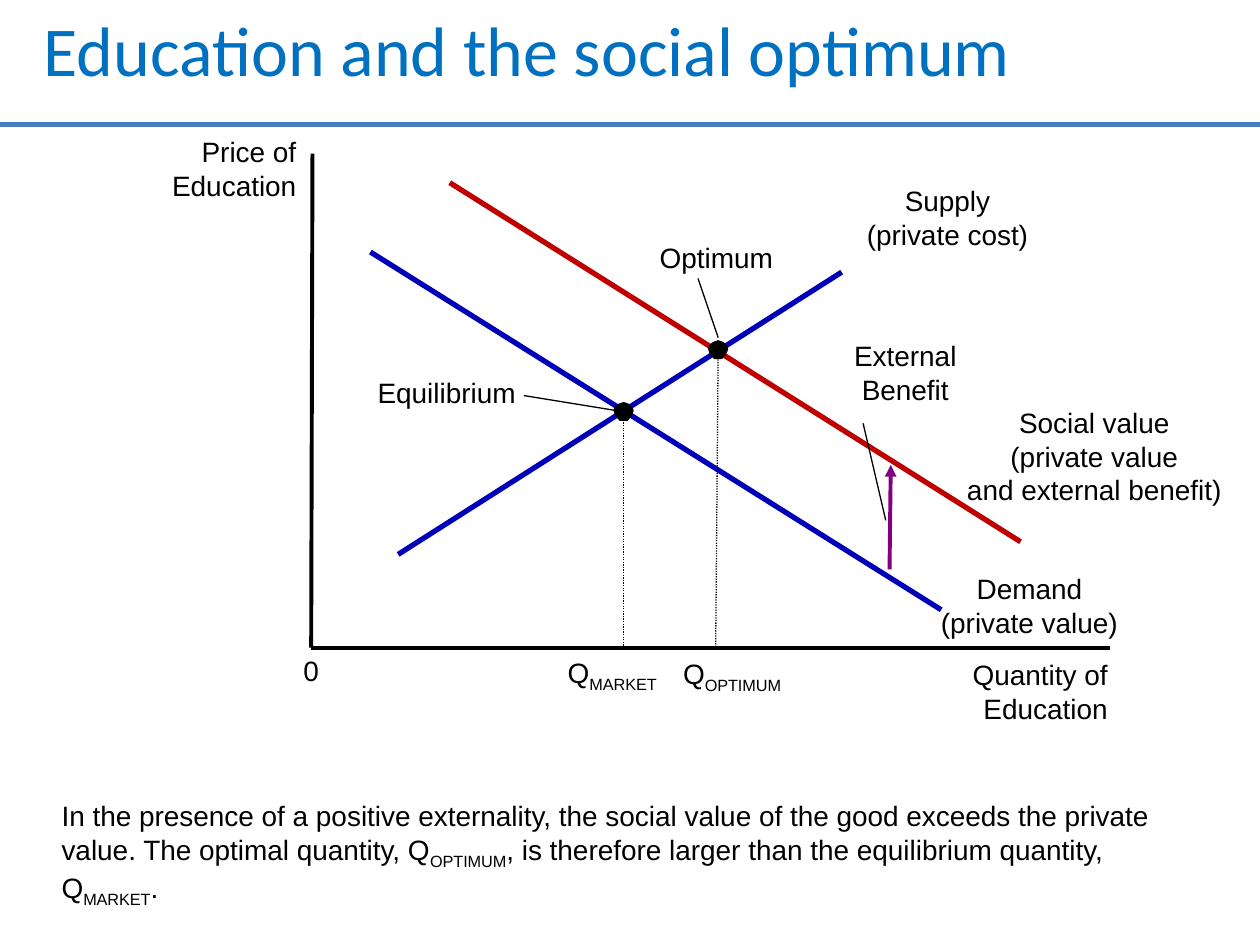
from dataclasses import dataclass

from lxml.etree import SubElement
from pptx import Presentation
from pptx.dml.color import RGBColor
from pptx.enum.dml import MSO_LINE
from pptx.enum.shapes import MSO_CONNECTOR, MSO_SHAPE
from pptx.enum.text import MSO_ANCHOR, MSO_AUTO_SIZE, PP_ALIGN
from pptx.oxml.ns import qn
from pptx.slide import Slide
from pptx.util import Pt

PX = 9144
BLACK = RGBColor(0x00, 0x00, 0x00)
WHITE = RGBColor(0xFF, 0xFF, 0xFF)
TITLE = RGBColor(0x00, 0x70, 0xC0)
RULE = RGBColor(0x4B, 0x7E, 0xBC)
BLUE = RGBColor(0x00, 0x00, 0xB8)
RED = RGBColor(0xC0, 0x00, 0x00)
PURPLE = RGBColor(0x80, 0x00, 0x80)
LEFT, MID, RIGHT = PP_ALIGN.LEFT, PP_ALIGN.CENTER, PP_ALIGN.RIGHT


@dataclass(frozen=True)
class Line:
    start: tuple[int, int]
    end: tuple[int, int]
    color: RGBColor = BLACK
    width: float = 0.75
    dotted: bool = False
    arrow: bool = False


@dataclass(frozen=True)
class Label:
    text: str
    box: tuple[int, int, int, int]
    align: PP_ALIGN = MID
    wrap: bool = False


LINES = [
    Line((0, 99), (1000, 99), RULE, 3),
    Line((248, 122), (247, 514), width=2.25),
    Line((247, 514), (881, 514), width=2.25),
    Line((294, 200), (747, 484), BLUE, 3),
    Line((316, 440), (668, 216), BLUE, 3),
    Line((495, 323), (495, 515), dotted=True),
    Line((416, 314), (490, 326)),
    Line((357, 145), (810, 430), RED, 3),
    Line((706, 452), (707, 369), PURPLE, 2.25, arrow=True),
    Line((685, 336), (703, 413)),
    Line((570, 275), (568, 516), dotted=True),
    Line((554, 221), (570, 268)),
]

LABELS = [
    Label("Price of\nEducation", (116, 102, 129, 64), RIGHT, True),
    Label("Quantity of Education", (753, 517, 136, 64), RIGHT, True),
    Label("0", (231, 514, 33, 37), LEFT),
    Label("Demand\n(private value)", (736, 449, 162, 64)),
    Label("Supply\n(private cost)", (677, 141, 150, 64)),
    Label("Q[MARKET]", (436, 515, 100, 37)),
    Label("Q[OPTIMUM]", (527, 516, 108, 37)),
    Label("Equilibrium", (289, 293, 131, 37)),
    Label("Optimum", (513, 186, 111, 37)),
    Label("Social value\n(private value\nand external benefit)", (756, 317, 225, 91)),
    Label("External\nBenefit", (667, 264, 103, 64)),
    Label(
        "In the presence of a positive externality, the social value of the good "
        "exceeds the private value. The optimal quantity, Q[OPTIMUM], is therefore "
        "larger than the equilibrium quantity, Q[MARKET].",
        (39, 629, 888, 91), LEFT, True,
    ),
]

DOTS = [(495, 326), (570, 277)]
HALF = [(0, 8), (3, 8), (5, 6), (7, 3), (8, 0), (7, -3), (5, -5), (3, -6), (0, -7)]
RING = HALF + [(-x, y) for x, y in HALF[-2:0:-1]]


def write(slide: Slide, text: str, *, box: tuple[int, int, int, int],
          align: PP_ALIGN = LEFT, wrap: bool = True, size: int = 16,
          font: str = "Arial", color: RGBColor = BLACK, grow: bool = True) -> None:
    frame = slide.shapes.add_textbox(*(n * PX for n in box)).text_frame
    frame.word_wrap = wrap
    frame.auto_size = MSO_AUTO_SIZE.SHAPE_TO_FIT_TEXT if grow else MSO_AUTO_SIZE.NONE
    frame.vertical_anchor = MSO_ANCHOR.TOP
    for row, words in enumerate(text.split("\n")):
        para = frame.add_paragraph() if row else frame.paragraphs[0]
        para.alignment = align
        for spot, part in enumerate(words.replace("]", "[").split("[")):
            if not part:
                continue
            run = para.add_run()
            run.text = part
            run.font.size = Pt(size)
            run.font.name = font
            run.font.color.rgb = color
            if spot % 2:
                run.font._element.set("baseline", "-25000")


def draw(slide: Slide, line: Line) -> None:
    ends = (n * PX for n in line.start + line.end)
    shape = slide.shapes.add_connector(MSO_CONNECTOR.STRAIGHT, *ends)
    shape.line.color.rgb = line.color
    shape.line.width = Pt(line.width)
    if line.dotted:
        shape.line.dash_style = MSO_LINE.ROUND_DOT
    if line.arrow:
        SubElement(shape.line._get_or_add_ln(), qn("a:tailEnd"), type="triangle")
    SubElement(shape._element.spPr, qn("a:effectLst"))


def dot(slide: Slide, spot: tuple[int, int]) -> None:
    ring = [(spot[0] + x, spot[1] + y) for x, y in RING]
    path = slide.shapes.build_freeform(*ring[0], scale=PX)
    path.add_line_segments(ring[1:], close=True)
    shape = path.convert_to_shape()
    shape.shadow.inherit = False
    shape.fill.solid()
    shape.fill.fore_color.rgb = BLACK
    shape.line.fill.background()


def panel(slide: Slide, box: tuple[int, int, int, int]) -> None:
    shape = slide.shapes.add_shape(MSO_SHAPE.RECTANGLE, *(n * PX for n in box))
    shape.shadow.inherit = False
    shape.fill.solid()
    shape.fill.fore_color.rgb = WHITE
    shape.line.color.rgb = WHITE
    shape.line.width = Pt(2)


def main() -> None:
    deck = Presentation()
    deck.slide_width, deck.slide_height = 1000 * PX, 750 * PX
    slide = deck.slides.add_slide(deck.slide_layouts[6])
    write(slide, "Education and the social optimum", box=(25, 0, 980, 58),
          size=40, font="Calibri", color=TITLE, grow=False)
    panel(slide, (249, 130, 636, 383))
    for line in LINES:
        draw(slide, line)
    for spot in DOTS:
        dot(slide, spot)
    for label in LABELS:
        write(slide, label.text, box=label.box, align=label.align, wrap=label.wrap)
    deck.save("out.pptx")


if __name__ == "__main__":
    main()
